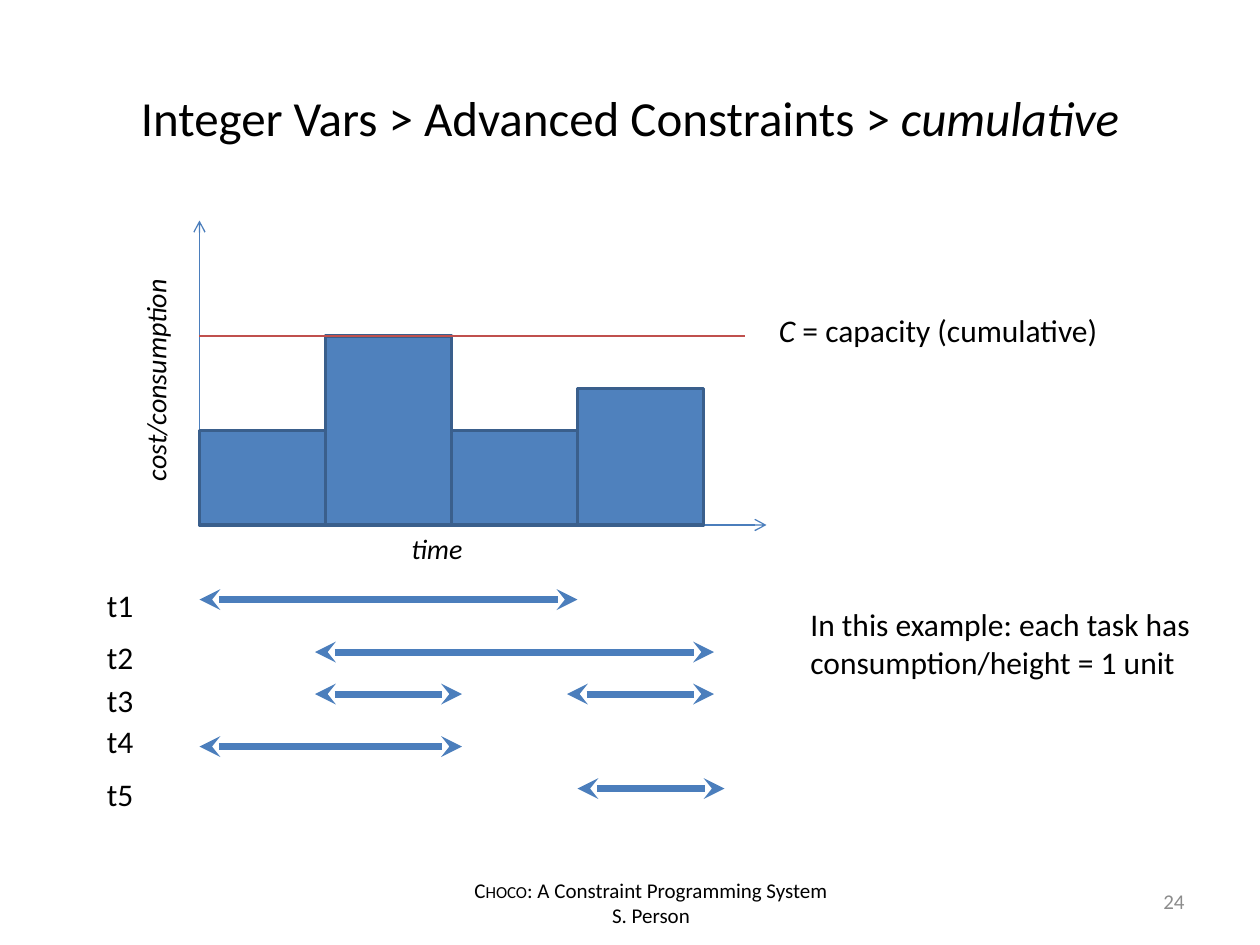
from dataclasses import dataclass

from pptx import Presentation
from pptx.dml.color import RGBColor
from pptx.enum.shapes import MSO_CONNECTOR, MSO_SHAPE
from pptx.enum.text import MSO_ANCHOR, PP_ALIGN
from pptx.oxml.xmlchemy import OxmlElement
from pptx.util import Inches, Pt


@dataclass(frozen=True)
class Theme:
    font: str = "Calibri"
    ink: str = "000000"
    muted: str = "8C8C8C"
    bar: str = "4F81BD"
    bar_edge: str = "3A5F8C"
    arrow: str = "4B7EBC"
    limit: str = "C0504D"
    title: int = 28
    body: int = 18
    axis: int = 16
    footer: int = 12
    thin: float = 0.75
    edge: float = 2
    thick: float = 4


def write(tf, paragraphs, theme, size, color=None, align=PP_ALIGN.LEFT, anchor=MSO_ANCHOR.TOP):
    """Fill a frame; each paragraph is a list of (text, style), style being "", "italic" or "small"."""
    tf.word_wrap = True
    tf.vertical_anchor = anchor
    for i, runs in enumerate(paragraphs):
        p = tf.add_paragraph() if i else tf.paragraphs[0]
        p.alignment = align
        for text, style in runs:
            r = p.add_run()
            r.text = text
            r.font.name = theme.font
            r.font.size = Pt(size)
            r.font.color.rgb = RGBColor.from_string(color or theme.ink)
            if style == "italic":
                r.font.italic = True
            elif style == "small":
                r.font._element.set("cap", "small")


class Deck:
    """Draws on a grid of 120 columns by 90 rows."""
    COLUMNS, ROWS = 120, 90

    def __init__(self, theme):
        self.theme = theme
        self.prs = Presentation()
        self.prs.slide_width, self.prs.slide_height = Inches(10), Inches(7.5)
        self.s = self.prs.slides.add_slide(self.prs.slide_layouts[5])

    def x(self, column):
        return round(self.prs.slide_width * column / self.COLUMNS)

    def y(self, row):
        return round(self.prs.slide_height * row / self.ROWS)

    def box(self, left, top, width, height):
        return self.x(left), self.y(top), self.x(width), self.y(height)

    def title(self, runs, *cells):
        sp = self.s.shapes.title
        sp.left, sp.top, sp.width, sp.height = self.box(*cells)
        write(sp.text_frame, [runs], self.theme, self.theme.title,
              align=PP_ALIGN.CENTER, anchor=MSO_ANCHOR.MIDDLE)

    def text(self, paragraphs, *cells, size=None, rotation=0, **style):
        sp = self.s.shapes.add_textbox(*self.box(*cells))
        sp.rotation = rotation
        write(sp.text_frame, paragraphs, self.theme, size or self.theme.body, **style)

    def bar(self, *cells):
        sp = self.s.shapes.add_shape(MSO_SHAPE.RECTANGLE, *self.box(*cells))
        sp.shadow.inherit = False
        sp.fill.solid()
        sp.fill.fore_color.rgb = RGBColor.from_string(self.theme.bar)
        sp.line.color.rgb = RGBColor.from_string(self.theme.bar_edge)
        sp.line.width = Pt(self.theme.edge)

    def line(self, x1, y1, x2, y2, color, width, head=None, tail=None):
        sp = self.s.shapes.add_connector(
            MSO_CONNECTOR.STRAIGHT, self.x(x1), self.y(y1), self.x(x2), self.y(y2))
        sp.line.color.rgb = RGBColor.from_string(color)
        sp.line.width = Pt(width)
        ln = sp.line._get_or_add_ln()
        for tag, kind in (("a:headEnd", head), ("a:tailEnd", tail)):
            if kind:
                end = OxmlElement(tag)
                end.set("type", kind)
                ln.append(end)
        sp._element.spPr.append(OxmlElement("a:effectLst"))


def main():
    theme = Theme()
    deck = Deck(theme)
    origin_x, origin_y, bar_width = 19, 50, 12
    capacity = 18

    deck.title([("Integer Vars > Advanced Constraints > ", ""), ("cumulative", "italic")],
               6, 3.6, 108, 15)
    deck.text([[("Choco", "small"), (": A Constraint Programming System", "")],
               [("S. Person", "")]],
              42, 83, 40, 6, size=theme.footer, align=PP_ALIGN.CENTER)
    deck.text([[("24", "")]], 86, 83.4, 28, 4.8, size=theme.footer, color=theme.muted,
              align=PP_ALIGN.RIGHT, anchor=MSO_ANCHOR.MIDDLE)

    # Each task: name, label row, arrow row, (start, end) columns
    tasks = [
        ("t1", 55.2, 57.1, [(19, 55)]),
        ("t2", 60.2, 62.1, [(30, 68)]),
        ("t3", 64.3, 66.1, [(30, 44), (54, 68)]),
        ("t4", 68.2, 71.1, [(19, 44)]),
        ("t5", 73.2, 75.1, [(55, 69)]),
    ]
    for name, label_row, row, spans in tasks:
        deck.text([[(name, "")]], 9, label_row, 6, 4.8)
        for start, end in spans:
            deck.line(start, row, end, row, theme.arrow, theme.thick, "stealth", "stealth")

    for end_x, end_y in ((origin_x, 21), (73, origin_y)):
        deck.line(origin_x, origin_y, end_x, end_y, theme.arrow, theme.thin, tail="arrow")
    for i, height in enumerate((9, capacity, 9, 13)):
        deck.bar(origin_x + i * bar_width, origin_y - height, bar_width, height)
    limit_row = origin_y - capacity
    deck.line(origin_x, limit_row, 71, limit_row, theme.limit, theme.thin)

    deck.text([[("time", "italic")]], 38, 50, 9, 4.4, size=theme.axis)
    deck.text([[("cost/consumption", "italic")]], 2.8, 32.8, 24, 4.4,
              size=theme.axis, rotation=270)
    deck.text([[("In this example: each task has consumption/height = 1 unit", "")]],
              76, 57, 40, 8.5)
    deck.text([[("C", "italic"), (" = capacity (cumulative)", "")]], 73, 29, 38, 4.8)

    deck.prs.save("out.pptx")


if __name__ == "__main__":
    main()
